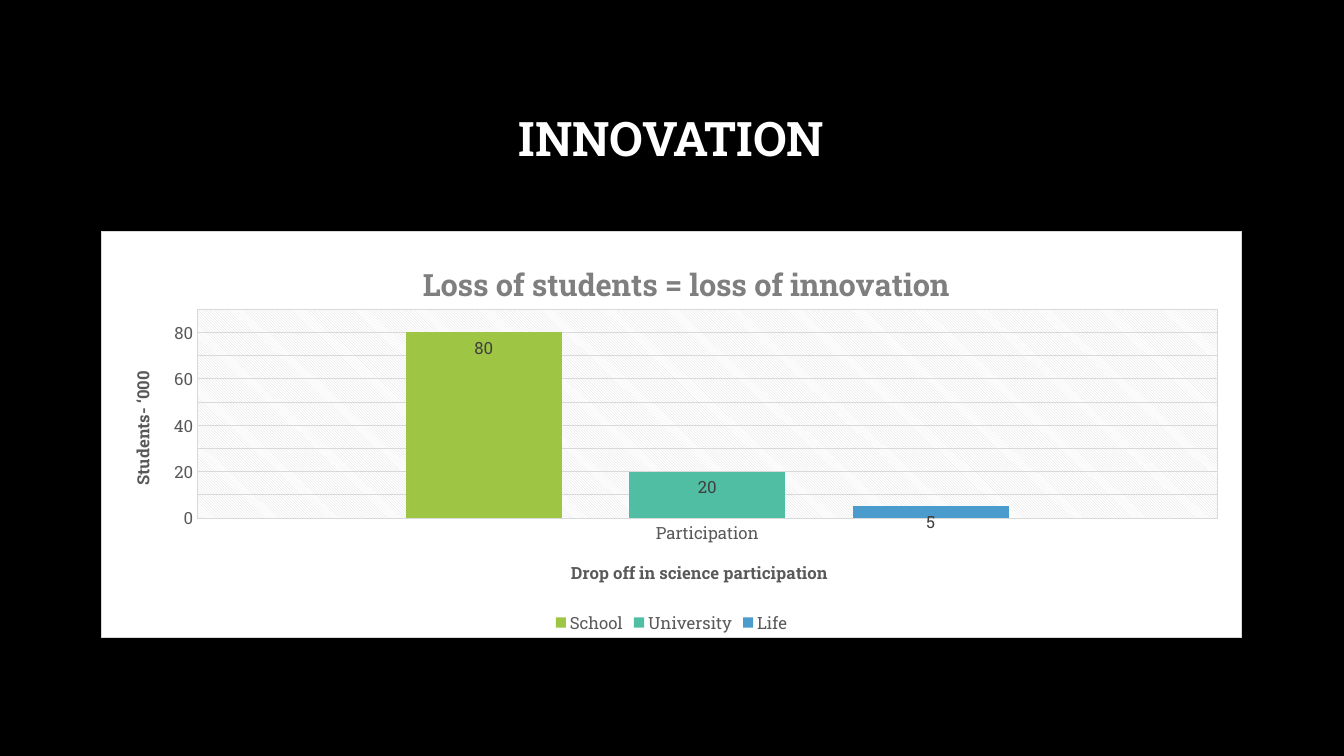
from lxml import etree
from pptx import Presentation
from pptx import util as u
from pptx.chart.data import CategoryChartData
from pptx.dml.color import RGBColor
from pptx.enum import chart as ec, text as et
from pptx.oxml import parse_xml
from pptx.oxml.ns import nsdecls, qn

FONT = "Roboto Slab"
GREY, PALE, WHITE = "595959", "D9D9D9", "FFFFFF"
HEADING = "INNOVATION"
CHART_TITLE = "Loss of students = loss of innovation"
CATEGORY_TITLE = "Drop off in science participation"
VALUE_TITLE = "Students- ‘000"
CATEGORIES = ["Participation"]
SERIES = [("School", 80, "9EC544"), ("University", 20, "50BEA3"), ("Life", 5, "4A9CCC")]
SLIDE = (13.33, 7.5)
LEFT, WIDTH = 1, 11.32


def color(value):
    return RGBColor.from_string(value)


def style(font, size=12, fill=GREY, bold=False):
    font.name, font.size, font.bold = FONT, u.Pt(size), bold
    font.color.rgb = color(fill)


def write(frame, content, **look):
    frame.text = content
    para = frame.paragraphs[0]
    style(para.runs[0].font, **look)
    return para


def place(element, inner=False, **shares):
    layout = element.find(qn("c:layout"))
    if layout is None:
        layout = etree.Element(qn("c:layout"))
        element.insert(0, layout)
    for child in list(layout):
        layout.remove(child)
    manual = etree.SubElement(layout, qn("c:manualLayout"))
    settings = [("layoutTarget", "inner")] if inner else []
    settings += [("xMode", "edge"), ("yMode", "edge"), *shares.items()]
    for name, value in settings:
        etree.SubElement(manual, qn("c:" + name), val=str(value))


def outline(line):
    line.color.rgb = color(PALE)
    line.width = u.Pt(0.75)


def area(fill=""):
    return parse_xml(
        f'<c:spPr {nsdecls("c", "a")}>{fill}<a:ln w="9525"><a:solidFill>'
        f'<a:srgbClr val="{PALE}"/></a:solidFill></a:ln></c:spPr>')


def add_heading(page):
    box = page.shapes.title
    box.left, box.top, box.width, box.height = map(u.Inches, (LEFT, 0.67, WIDTH, 1.45))
    frame = box.text_frame
    frame.word_wrap = True
    frame.vertical_anchor = et.MSO_ANCHOR.MIDDLE
    para = write(frame, HEADING, size=34, fill=WHITE, bold=True)
    para.alignment = et.PP_ALIGN.CENTER
    para.line_spacing = 0.9


def add_columns(page):
    data = CategoryChartData()
    data.categories = CATEGORIES
    for name, value, _ in SERIES:
        data.add_series(name, [value])
    chart = page.shapes.add_chart(
        ec.XL_CHART_TYPE.COLUMN_CLUSTERED,
        *map(u.Inches, (LEFT, 2.29, WIDTH, 4.04)), data).chart
    style(chart.font)

    plot = chart.plots[0]
    plot.gap_width, plot.overlap, plot.vary_by_categories = 267, -43, False
    for series, (_, _, fill) in zip(plot.series, SERIES):
        series.format.fill.solid()
        series.format.fill.fore_color.rgb = color(fill)
        labels = series.data_labels
        labels.show_value = True
        labels.position = ec.XL_LABEL_POSITION.INSIDE_END
        style(labels.font, fill="404040")

    category, value = chart.category_axis, chart.value_axis
    value.minimum_scale, value.maximum_scale = 0, 90
    value.major_unit, value.minor_unit = 20, 10
    value.has_minor_gridlines = True
    value._element.find(qn("c:minorGridlines")).append(area())
    for axis in (category, value):
        axis.major_tick_mark = axis.minor_tick_mark = ec.XL_TICK_MARK.NONE
        axis.has_major_gridlines = True
        outline(axis.major_gridlines.format.line)
        style(axis.tick_labels.font)
    outline(category.format.line)
    value.format.line.fill.background()

    chart.has_title = True
    titles = [
        (chart.chart_title, CHART_TITLE, 22, "7F7F7F", 0.277, 0.06),
        (category.axis_title, CATEGORY_TITLE, 12, GREY, 0.409, 0.8),
        (value.axis_title, VALUE_TITLE, 12, GREY, 0.022, 0.337),
    ]
    for title, content, size, fill, x, y in titles:
        write(title.text_frame, content, size=size, fill=fill, bold=True)
        place(title._element, x=x, y=y)
    value.axis_title.text_frame._txBody.bodyPr.set("rot", "-5400000")
    value.axis_title.text_frame._txBody.bodyPr.set("vert", "horz")

    chart.has_legend = True
    chart.legend.position = ec.XL_LEGEND_POSITION.BOTTOM
    chart.legend.include_in_layout = False
    style(chart.legend.font)

    space = chart._chartSpace
    body = space.chart.plotArea
    place(body, inner=True, x=0.084, y=0.192, w=0.895, h=0.514)
    body.append(area(
        f'<a:pattFill prst="ltDnDiag"><a:fgClr><a:srgbClr val="{PALE}"/></a:fgClr>'
        f'<a:bgClr><a:srgbClr val="{WHITE}"/></a:bgClr></a:pattFill>'))
    space.chart.addnext(area(f'<a:solidFill><a:srgbClr val="{WHITE}"/></a:solidFill>'))


def main():
    deck = Presentation()
    deck.slide_width, deck.slide_height = map(u.Inches, SLIDE)
    page = deck.slides.add_slide(deck.slide_layouts[5])
    page.background.fill.solid()
    page.background.fill.fore_color.rgb = color("000000")
    add_heading(page)
    add_columns(page)
    deck.save("out.pptx")


if __name__ == "__main__":
    main()
